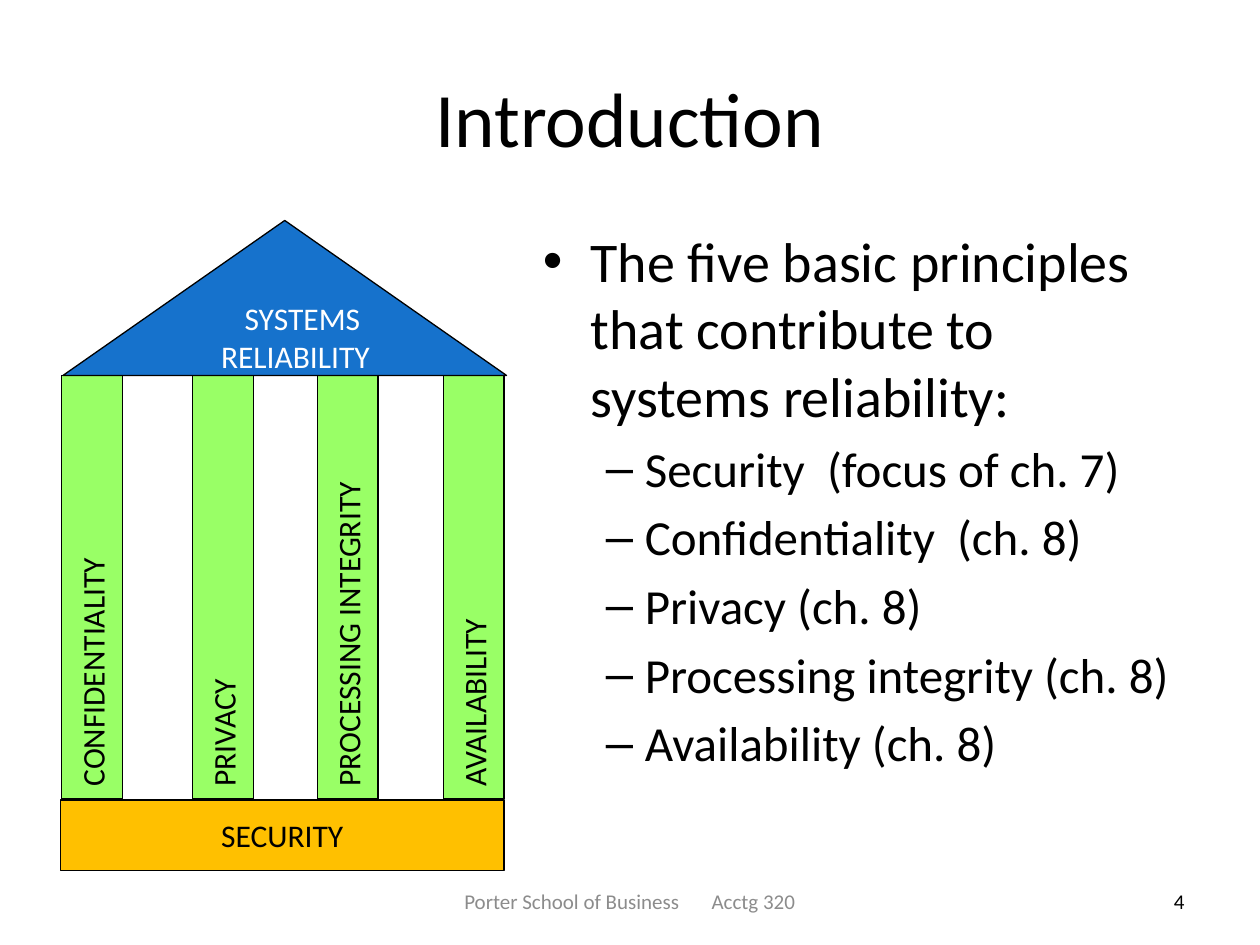
"""Build the slide that introduces the five principles of systems reliability."""
from dataclasses import dataclass

from lxml import etree
from pptx import Presentation
from pptx import util as u
from pptx.dml.color import RGBColor
from pptx.enum import shapes, text
from pptx.oxml.ns import qn

LEFT, CENTER, RIGHT = text.PP_ALIGN.LEFT, text.PP_ALIGN.CENTER, text.PP_ALIGN.RIGHT


@dataclass(frozen=True)
class Theme:
    """Hold the font, colours and type sizes of the slide."""
    font: str = "Calibri"
    ink: str = "000000"
    muted: str = "8C8C8C"
    light: str = "FFFFFF"
    roof: str = "1672CC"
    pillar: str = "99FF66"
    base: str = "FFC000"
    title: int = 44
    point: int = 32
    detail: int = 28
    label: int = 18
    footer: int = 12
    outline: float = 0.75


THEME = Theme()


def style(para, size, color, align=LEFT):
    """Set the font and alignment of a paragraph."""
    para.alignment = align
    para.font.name = THEME.font
    para.font.size = u.Pt(size)
    para.font.color.rgb = RGBColor.from_string(color)


def fill_frame(frame, lines, size, color, align, anchor=text.MSO_ANCHOR.MIDDLE):
    """Write one styled paragraph for each line and return the paragraphs."""
    frame.word_wrap = True
    frame.vertical_anchor = anchor
    frame.text = "\n".join(lines)
    for para in frame.paragraphs:
        style(para, size, color, align)
    return frame.paragraphs


def add_text(page, place, lines, size, color=THEME.ink, align=LEFT,
             anchor=text.MSO_ANCHOR.MIDDLE):
    """Add a text box and return its paragraphs."""
    box = page.shapes.add_textbox(*map(u.Inches, place))
    return fill_frame(box.text_frame, lines, size, color, align, anchor)


def add_block(page, kind, place, fill, lines, color=THEME.ink, align=CENTER, turn=0):
    """Add an outlined, labelled shape and return its paragraphs."""
    block = page.shapes.add_shape(kind, *map(u.Inches, place))
    block.rotation = turn
    block.shadow.inherit = False
    block.fill.solid()
    block.fill.fore_color.rgb = RGBColor.from_string(fill)
    block.line.color.rgb = RGBColor.from_string(THEME.ink)
    block.line.width = u.Pt(THEME.outline)
    return fill_frame(block.text_frame, lines, THEME.label, color, align)


def indent(para, margin, first=0.0):
    """Set the left margin and first-line indent of a paragraph."""
    props = para._p.get_or_add_pPr()
    props.set("marL", str(u.Inches(margin)))
    props.set("indent", str(u.Inches(first)))
    return props


def add_bullet(para, mark, margin, hang, size):
    """Turn a paragraph into a hanging bullet."""
    style(para, size, THEME.ink)
    para.space_before = u.Pt(size * 0.2)
    props = indent(para, margin, -hang)
    etree.SubElement(props, qn("a:buFont")).set("typeface", "Arial")
    etree.SubElement(props, qn("a:buChar")).set("char", mark)


def add_principles(page):
    """Add the bulleted list of principles."""
    lines = ["The five basic principles that contribute to systems reliability:",
             "Security  (focus of ch. 7)", "Confidentiality  (ch. 8)",
             "Privacy (ch. 8)", "Processing integrity (ch. 8)",
             "Availability (ch. 8)"]
    point, *details = add_text(page, (4.21, 1.75, 5.29, 5.17), lines, THEME.point,
                               anchor=text.MSO_ANCHOR.TOP)
    add_bullet(point, "•", 0.38, 0.38, THEME.point)
    for para in details:
        para.level = 1
        add_bullet(para, "–", 0.81, 0.31, THEME.detail)


def add_temple(page):
    """Add the temple: base, four upright pillars and roof."""
    rect = shapes.MSO_SHAPE.RECTANGLE
    add_block(page, rect, (0.48, 6.35, 3.52, 0.56), THEME.base, ["SECURITY"])
    pillars = {"CONFIDENTIALITY": 0.73, "PRIVACY": 1.77,
               "PROCESSING INTEGRITY": 2.76, "AVAILABILITY": 3.76}
    length, width = 3.36, 0.48
    for name, middle in pillars.items():
        place = (middle - length / 2, 4.42, length, width)
        add_block(page, rect, place, THEME.pillar, [name], align=LEFT, turn=270)
    roof = add_block(page, shapes.MSO_SHAPE.ISOSCELES_TRIANGLE,
                     (0.5, 1.75, 3.52, 1.23), THEME.roof,
                     ["SYSTEMS", "RELIABILITY"], THEME.light)
    for para, margin in zip(roof, (0.28, 0.17)):
        indent(para, margin)


def add_footer(page):
    """Add the school, the course and the page number."""
    top, height = 6.95, 0.4
    add_text(page, (3.42, top, 2.07, height), ["Porter School of Business"],
             THEME.footer, THEME.muted, RIGHT)
    add_text(page, (5.55, top, 1.04, height), ["Acctg 320"],
             THEME.footer, THEME.muted)
    add_text(page, (7.17, top, 2.33, height), ["4"], THEME.footer, align=RIGHT)


def main():
    """Build and save the deck."""
    deck = Presentation()
    deck.slide_width, deck.slide_height = u.Inches(10), u.Inches(7.5)
    page = deck.slides.add_slide(deck.slide_layouts[6])
    add_text(page, (0.5, 0.3, 9, 1.25), ["Introduction"], THEME.title, align=CENTER)
    add_footer(page)
    add_principles(page)
    add_temple(page)
    deck.save("out.pptx")


if __name__ == "__main__":
    main()
